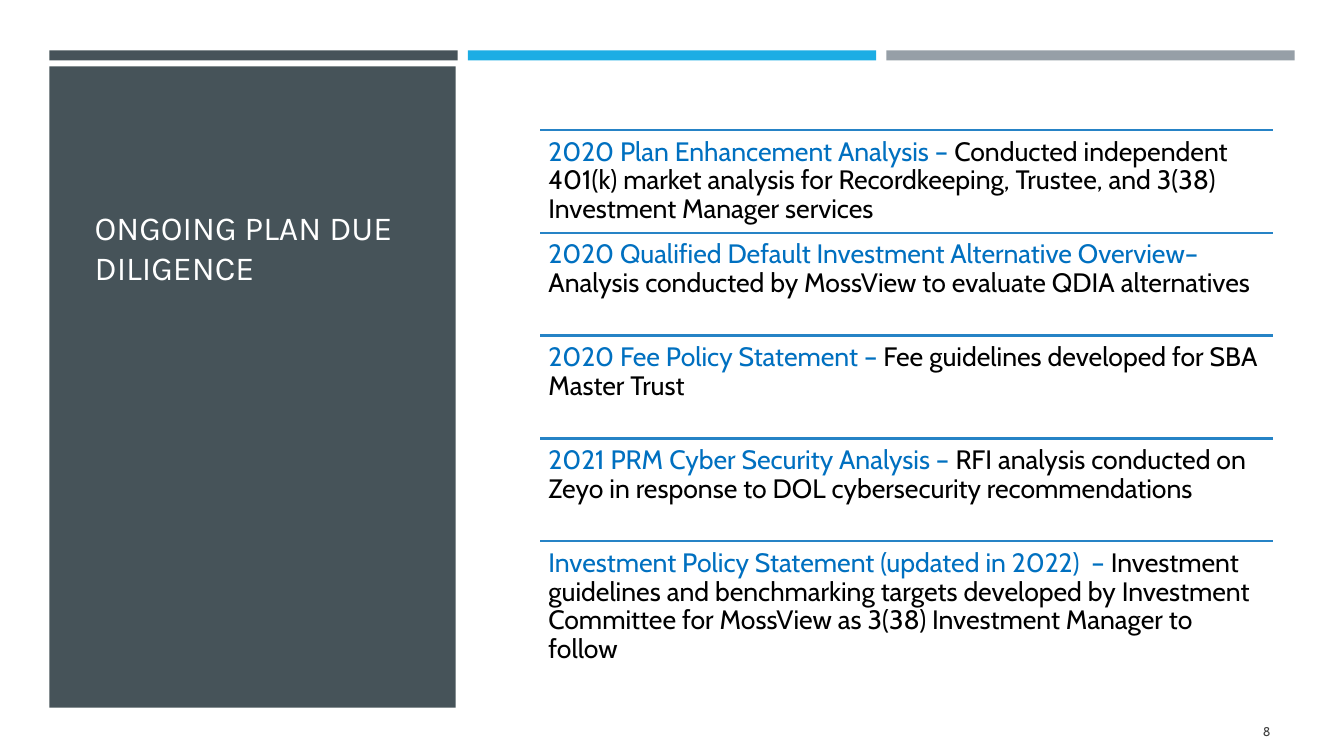
import pptx
import pptx.util
import pptx.dml.color
import pptx.enum.shapes
import pptx.enum.text
import pptx.oxml.ns
import lxml.etree

Inches = pptx.util.Inches
Pt = pptx.util.Pt
RGBColor = pptx.dml.color.RGBColor
ANCHOR = pptx.enum.text.MSO_ANCHOR
ALIGN = pptx.enum.text.PP_ALIGN

# Content
TITLE = "ONGOING PLAN DUE DILIGENCE"
PAGE_NUMBER = "8"
REVIEWS = [
    ("2020 Plan Enhancement Analysis – ",
     "Conducted independent 401(k) market analysis for Recordkeeping, Trustee, "
     "and 3(38) Investment Manager services"),
    ("2020 Qualified Default Investment Alternative Overview– ",
     "Analysis conducted by MossView to evaluate QDIA alternatives"),
    ("2020 Fee Policy Statement – ",
     "Fee guidelines developed for SBA Master Trust"),
    ("2021 PRM Cyber Security Analysis – ",
     "RFI analysis conducted on Zeyo in response to DOL cybersecurity recommendations"),
    ("Investment Policy Statement (updated in 2022)  – ",
     "Investment guidelines and benchmarking targets developed by Investment "
     "Committee for MossView as 3(38) Investment Manager to follow"),
]

# Colours and fonts
SLATE = RGBColor(0x46, 0x53, 0x59)
SKY = RGBColor(0x1C, 0xAD, 0xE4)
GREY = RGBColor(0x96, 0x9F, 0xA7)
RULE_BLUE = RGBColor(0x26, 0x83, 0xC6)
LEAD_BLUE = RGBColor(0x00, 0x70, 0xC0)
CHARCOAL = RGBColor(0x40, 0x40, 0x40)
WHITE = RGBColor(0xFF, 0xFF, 0xFF)
BLACK = RGBColor(0x00, 0x00, 0x00)
HEADING_FONT, BODY_FONT = "Karla", "Cabin"

# Grid, in inches
MARGIN, BAR_TOP, BAR_WIDTH, BAR_HEIGHT, BAR_GAP = 0.49, 0.5, 4.05, 0.1, 0.1
LIST_LEFT, LIST_TOP, LIST_WIDTH, ROW_HEIGHT = 5.36, 1.29, 7.27, 1.02


def add_block(page, left, top, width, height, color):
    block = page.shapes.add_shape(
        pptx.enum.shapes.MSO_SHAPE.RECTANGLE,
        Inches(left), Inches(top), Inches(width), Inches(height))
    block.shadow.inherit = False
    block.fill.solid()
    block.fill.fore_color.rgb = color
    block.line.fill.background()


def add_text(page, left, top, width, height, spans, font, size,
             anchor=ANCHOR.TOP, inset=None):
    """Add a one-paragraph box from (text, colour) spans."""
    box = page.shapes.add_textbox(
        Inches(left), Inches(top), Inches(width), Inches(height))
    frame = box.text_frame
    frame.word_wrap = True
    frame.vertical_anchor = anchor
    if inset is not None:
        frame.margin_left = frame.margin_right = Inches(inset)
        frame.margin_top = frame.margin_bottom = Inches(inset)
    para = frame.paragraphs[0]
    para.font.name = font
    para.font.size = Pt(size)
    for text, color in spans:
        span = para.add_run()
        span.text = text
        span.font.color.rgb = color
    return para


def add_rule(page, left, top, width):
    rule = page.shapes.add_connector(
        pptx.enum.shapes.MSO_CONNECTOR.STRAIGHT,
        Inches(left), Inches(top), Inches(left + width), Inches(top))
    rule.line.color.rgb = RULE_BLUE
    rule.line.width = Pt(1.75)
    lxml.etree.SubElement(rule.element.spPr, pptx.oxml.ns.qn("a:effectLst"))


def main():
    deck = pptx.Presentation()
    deck.slide_width, deck.slide_height = Inches(13.33), Inches(7.5)
    page = deck.slides.add_slide(deck.slide_layouts[6])

    # Bars across the top
    for column, color in enumerate((SLATE, SKY, GREY)):
        add_block(page, MARGIN + column * (BAR_WIDTH + BAR_GAP), BAR_TOP,
                  BAR_WIDTH, BAR_HEIGHT, color)

    # Title panel
    add_block(page, MARGIN, 0.66, 4.03, 6.36, SLATE)
    add_text(page, 0.84, 1.02, 3.32, 1.88, [(TITLE, WHITE)],
             HEADING_FONT, 24, ANCHOR.BOTTOM)

    # Page number
    number = add_text(page, 11.55, 7.06, 1.15, 0.4, [(PAGE_NUMBER, CHARCOAL)],
                      BODY_FONT, 9, ANCHOR.MIDDLE)
    number.alignment = ALIGN.RIGHT

    # Ruled list of reviews
    for row, (lead, detail) in enumerate(REVIEWS):
        top = LIST_TOP + row * ROW_HEIGHT
        add_rule(page, LIST_LEFT, top, LIST_WIDTH)
        para = add_text(page, LIST_LEFT, top, LIST_WIDTH, ROW_HEIGHT,
                        [(lead, LEAD_BLUE), (detail, BLACK)],
                        BODY_FONT, 19, inset=0.08)
        para.line_spacing = 0.9

    deck.save("out.pptx")


if __name__ == "__main__":
    main()
